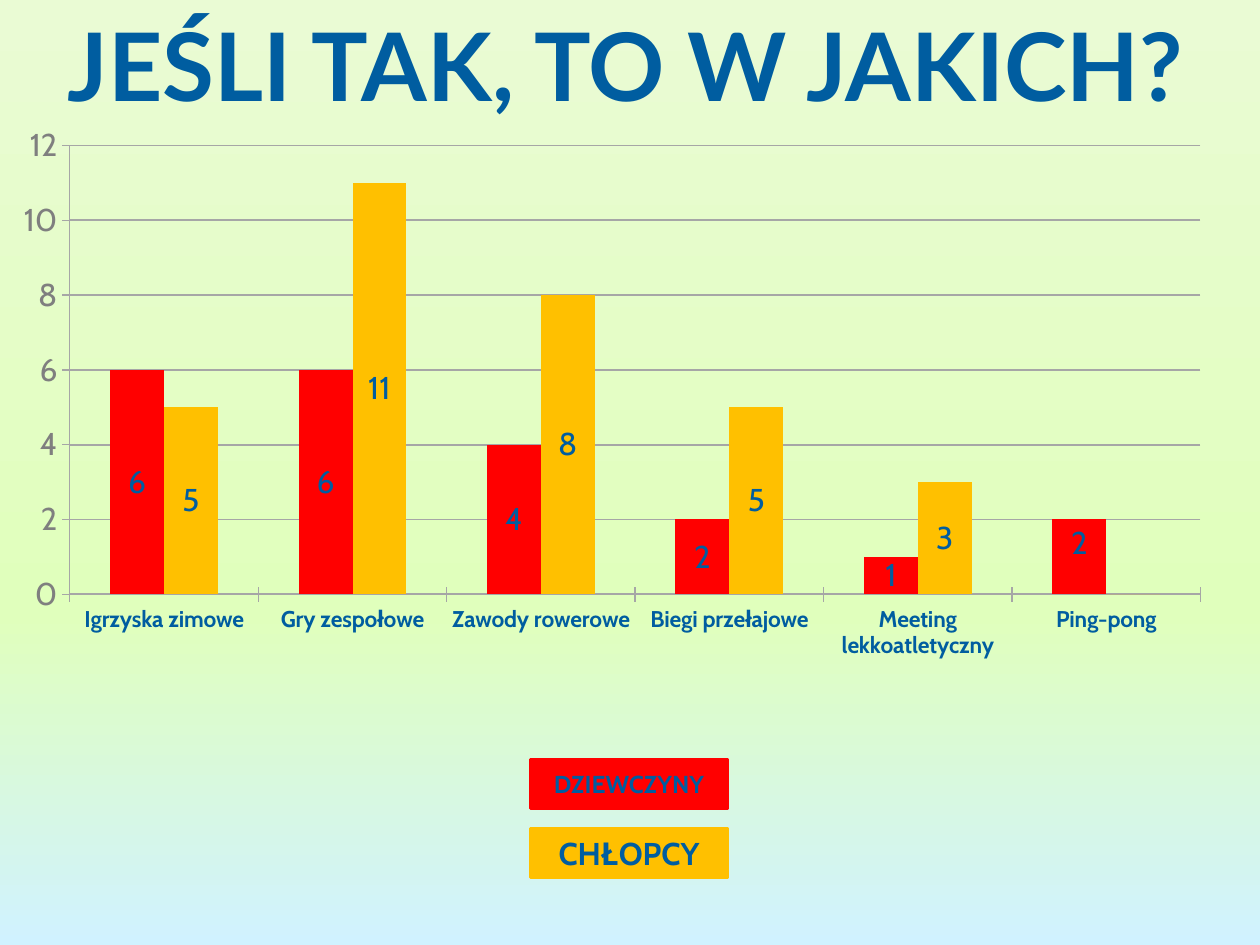
import copy

import lxml.etree
import pptx
import pptx.chart.data
import pptx.dml.color
import pptx.enum.chart
import pptx.enum.shapes
import pptx.enum.text
import pptx.oxml.ns
import pptx.util

Pt = pptx.util.Pt
RGBColor = pptx.dml.color.RGBColor

BLUE = RGBColor(0x00, 0x5D, 0xA0)
RED = RGBColor(0xFF, 0x00, 0x00)
AMBER = RGBColor(0xFF, 0xC0, 0x00)
AXIS_TEXT = RGBColor(0x7F, 0x7F, 0x7F)
GRID = RGBColor(0xA6, 0xA6, 0xA6)
SKY = [
    (0, RGBColor(0xEA, 0xFB, 0xD4)),
    (0.65, RGBColor(0xE0, 0xFF, 0xBC)),
    (1, RGBColor(0xD0, 0xF2, 0xFF)),
]

HEADING = "JEŚLI TAK, TO W JAKICH?"
EVENTS = [
    "Igrzyska zimowe",
    "Gry zespołowe",
    "Zawody rowerowe",
    "Biegi przełajowe",
    "Meeting lekkoatletyczny",
    "Ping-pong",
]
GROUPS = [
    ("Series 1", [6, 6, 4, 2, 1, 2], RED, "DZIEWCZYNY", 14),
    ("Series 2", [5, 11, 8, 5, 3, 0], AMBER, "CHŁOPCY", 18),
]
PLOT_AREA = {"x": 0.057, "y": 0.054, "w": 0.923, "h": 0.808}
LEGEND_LEFT, LEGEND_TOP, LEGEND_STEP = 303, 434, 39.5


def style(font, size, color, name="Cabin", bold=False):
    font.size, font.name, font.bold = Pt(size), name, bold
    font.color.rgb = color


def paint_background(slide):
    fill = slide.background.fill
    fill.gradient()
    fill.gradient_angle = 270
    first = fill.gradient_stops[0]._gs
    first.addnext(copy.deepcopy(first))
    for stop, (position, color) in zip(fill.gradient_stops, SKY):
        stop.position = position
        stop.color.rgb = color


def add_heading(slide):
    heading = slide.shapes.title
    heading.left, heading.top, heading.width, heading.height = Pt(25), 0, Pt(665), Pt(73)
    frame = heading.text_frame
    frame.text = HEADING
    frame.auto_size = pptx.enum.text.MSO_AUTO_SIZE.SHAPE_TO_FIT_TEXT
    paragraph = frame.paragraphs[0]
    paragraph.alignment = pptx.enum.text.PP_ALIGN.CENTER
    style(paragraph.font, 54, BLUE, "Lato", True)


def fix_plot_area(chart):
    qn = pptx.oxml.ns.qn
    area = chart._chartSpace.chart.plotArea
    for old in area.findall(qn("c:layout")):
        area.remove(old)
    layout = lxml.etree.Element(qn("c:layout"))
    manual = lxml.etree.SubElement(layout, qn("c:manualLayout"))
    settings = {"layoutTarget": "inner", "xMode": "edge", "yMode": "edge", **PLOT_AREA}
    for tag, value in settings.items():
        lxml.etree.SubElement(manual, qn("c:" + tag)).set("val", str(value))
    area.insert(0, layout)


def add_answers(slide):
    answers = pptx.chart.data.CategoryChartData()
    answers.categories = EVENTS
    for name, values, *_ in GROUPS:
        answers.add_series(name, values)
    chart = slide.shapes.add_chart(
        pptx.enum.chart.XL_CHART_TYPE.COLUMN_CLUSTERED,
        0, Pt(66), Pt(700), Pt(317.5), answers,
    ).chart
    chart.has_title = chart.has_legend = False
    style(chart.font, 18, AXIS_TEXT)
    fix_plot_area(chart)

    columns = chart.plots[0]
    columns.gap_width, columns.overlap, columns.vary_by_categories = 150, 0, False
    label_position = pptx.enum.chart.XL_LABEL_POSITION
    for series, (_, _, color, _, _) in zip(columns.series, GROUPS):
        series.format.fill.solid()
        series.format.fill.fore_color.rgb = color
        labels = series.data_labels
        labels.show_value = True
        labels.position = label_position.CENTER
        labels.number_format, labels.number_format_is_linked = "0;;", False
        style(labels.font, 18, BLUE)
    ping_pong = columns.series[0].points[len(EVENTS) - 1].data_label
    style(ping_pong.font, 18, BLUE)
    ping_pong.position = label_position.INSIDE_END

    counts = chart.value_axis
    counts.minimum_scale, counts.maximum_scale, counts.major_unit = 0, 12, 2
    counts.major_gridlines.format.line.color.rgb = GRID
    counts.major_gridlines.format.line.width = Pt(1)
    for axis in (chart.category_axis, counts):
        axis.major_tick_mark = pptx.enum.chart.XL_TICK_MARK.CROSS
        axis.format.line.color.rgb = GRID
        axis.format.line.width = Pt(0.75)
    style(chart.category_axis.tick_labels.font, 13, BLUE, bold=True)


def add_legend(slide):
    for row, (_, _, color, caption, size) in enumerate(GROUPS):
        key = slide.shapes.add_shape(
            pptx.enum.shapes.MSO_SHAPE.RECTANGLE,
            Pt(LEGEND_LEFT), Pt(LEGEND_TOP + row * LEGEND_STEP), Pt(113), Pt(28),
        )
        key.shadow.inherit = False
        key.fill.solid()
        key.fill.fore_color.rgb = color
        key.line.color.rgb = color
        key.line.width = Pt(1.5)
        key.text_frame.text = caption
        key.text_frame.vertical_anchor = pptx.enum.text.MSO_ANCHOR.MIDDLE
        paragraph = key.text_frame.paragraphs[0]
        paragraph.alignment = pptx.enum.text.PP_ALIGN.CENTER
        style(paragraph.font, size, BLUE, bold=True)


def main():
    deck = pptx.Presentation()
    deck.slide_width, deck.slide_height = Pt(720), Pt(540)
    slide = deck.slides.add_slide(deck.slide_layouts[5])
    paint_background(slide)
    add_answers(slide)
    add_heading(slide)
    add_legend(slide)
    deck.save("out.pptx")


if __name__ == "__main__":
    main()
